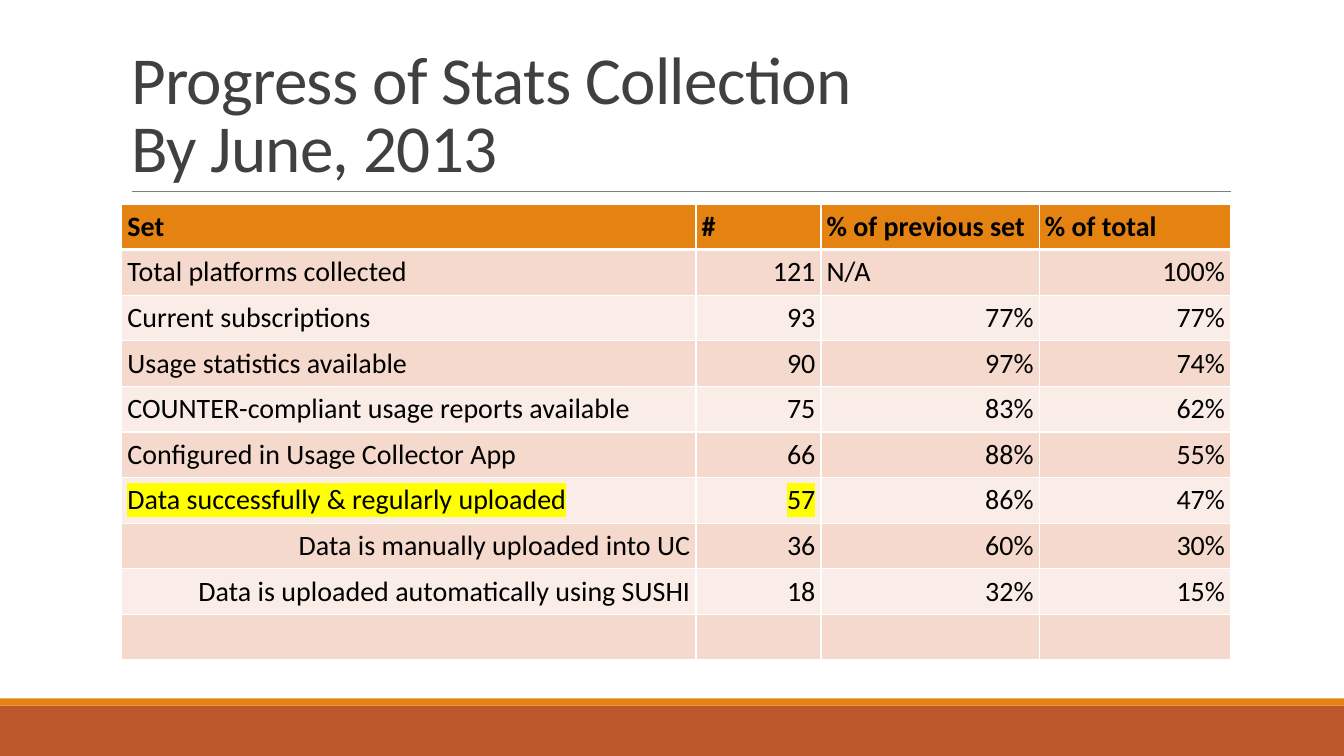
"""Build a slide with a table on the progress of statistics collection."""
from dataclasses import dataclass

from lxml.etree import SubElement
from pptx import Presentation
from pptx.dml.color import RGBColor
from pptx.enum.shapes import MSO_CONNECTOR as Conn, MSO_SHAPE as Shp
from pptx.enum.text import MSO_ANCHOR as Anchor, MSO_AUTO_SIZE as AutoSize, PP_ALIGN as Align
from pptx.oxml import parse_xml
from pptx.oxml.ns import nsdecls, qn
from pptx.util import Cm, Pt

WHITE = RGBColor(0xFF, 0xFF, 0xFF)
BLACK = RGBColor(0, 0, 0)
DARK = RGBColor(0x40, 0x40, 0x40)
GRAY = RGBColor(0x80, 0x80, 0x80)
ORANGE = RGBColor(0xE4, 0x83, 0x12)
RUST = RGBColor(0xBD, 0x58, 0x2C)
PEACH = RGBColor(0xF5, 0xD9, 0xCC)
PALE = RGBColor(0xFA, 0xED, 0xE7)
YELLOW = RGBColor(0xFF, 0xFF, 0x00)
FONT = "Calibri"


@dataclass
class Band:
    top: float
    height: float
    color: RGBColor


@dataclass
class Row:
    texts: tuple[str, ...]
    header: bool = False
    indented: bool = False
    marked: int = 0


BANDS = [Band(17.78, 1.27, RUST), Band(17.6, 0.18, ORANGE)]
COL_WIDTHS = [14.47, 3.15, 5.5, 4.82]
ROW_HEIGHT = 1.15
ROWS = [
    Row(("Set", "#", "% of previous set", "% of total"), header=True),
    Row(("Total platforms collected", "121", "N/A", "100%")),
    Row(("Current subscriptions", "93", "77%", "77%")),
    Row(("Usage statistics available", "90", "97%", "74%")),
    Row(("COUNTER-compliant usage reports available", "75", "83%", "62%")),
    Row(("Configured in Usage Collector App", "66", "88%", "55%")),
    Row(("Data successfully & regularly uploaded", "57", "86%", "47%"), marked=2),
    Row(("Data is manually uploaded into UC", "36", "60%", "30%"), indented=True),
    Row(("Data is uploaded automatically using SUSHI", "18", "32%", "15%"), indented=True),
    Row(("", "", "", "")),
]


def add_run(p, text: str, size: float, color: RGBColor, bold: bool = False):
    r = p.add_run()
    r.text = text
    r.font.size = Pt(size)
    r.font.name = FONT
    r.font.bold = bold
    r.font.color.rgb = color
    return r


def add_band(slide, band: Band, width: int) -> None:
    s = slide.shapes.add_shape(Shp.RECTANGLE, 0, Cm(band.top), width, Cm(band.height))
    s.shadow.inherit = False
    s.fill.solid()
    s.fill.fore_color.rgb = band.color
    s.line.fill.background()


def add_rule(slide) -> None:
    s = slide.shapes.add_connector(Conn.STRAIGHT, Cm(3.32), Cm(4.82), Cm(31.01), Cm(4.82))
    s.line.color.rgb = GRAY
    s.line.width = Pt(0.5)
    SubElement(s._element.spPr, qn("a:effectLst"))


def fill_title(slide, lines: list[str]) -> None:
    s = slide.shapes.title
    s.left, s.top, s.width, s.height = Cm(3.05), Cm(0.79), Cm(27.94), Cm(4.04)
    tf = s.text_frame
    tf.word_wrap = True
    tf.auto_size = AutoSize.NONE
    tf.vertical_anchor = Anchor.BOTTOM
    p = tf.paragraphs[0]
    p.alignment = Align.LEFT
    p.line_spacing = 0.85
    for i, line in enumerate(lines):
        if i:
            p.add_line_break()
        r = add_run(p, line, 48, DARK)
        r.font._element.set("spc", "-50")


def set_borders(cell, top: float, bottom: float) -> None:
    tc_pr = cell._tc.get_or_add_tcPr()
    for i, (side, width) in enumerate({"L": 1, "R": 1, "T": top, "B": bottom}.items()):
        tc_pr.insert(i, parse_xml(
            f'<a:ln{side} {nsdecls("a")} w="{Pt(width)}"><a:solidFill>'
            f'<a:srgbClr val="{WHITE}"/></a:solidFill></a:ln{side}>'))


def highlight(r) -> None:
    fill = r.font._element.find(qn("a:solidFill"))
    fill.addnext(parse_xml(
        f'<a:highlight {nsdecls("a")}><a:srgbClr val="{YELLOW}"/></a:highlight>'))


def fill_cell(cell, row: Row, row_no: int, col_no: int) -> None:
    text = row.texts[col_no]
    cell.fill.solid()
    cell.fill.fore_color.rgb = ORANGE if row.header else PEACH if row_no % 2 else PALE
    set_borders(cell, 3 if row_no == 1 else 1, 3 if row.header else 1)
    cell.margin_left = cell.margin_right = Cm(0.14)
    cell.margin_top = cell.margin_bottom = Cm(0.14)
    if not text:
        return
    p = cell.text_frame.paragraphs[0]
    right = text[0].isdigit() or row.indented
    p.alignment = Align.RIGHT if right else Align.LEFT
    r = add_run(p, text, 20, BLACK, row.header)
    if col_no < row.marked:
        highlight(r)


def add_progress_table(slide) -> None:
    s = slide.shapes.add_table(len(ROWS), len(COL_WIDTHS), Cm(3.07), Cm(5.14),
                               Cm(sum(COL_WIDTHS)), Cm(ROW_HEIGHT * len(ROWS)))
    for column, width in zip(s.table.columns, COL_WIDTHS):
        column.width = Cm(width)
    for i, row in enumerate(ROWS):
        s.table.rows[i].height = Cm(ROW_HEIGHT)
        for j in range(len(COL_WIDTHS)):
            fill_cell(s.table.cell(i, j), row, i, j)


def main() -> None:
    prs = Presentation()
    prs.slide_width, prs.slide_height = Cm(33.87), Cm(19.05)
    slide = prs.slides.add_slide(prs.slide_layouts[5])
    for band in BANDS:
        add_band(slide, band, prs.slide_width)
    add_rule(slide)
    fill_title(slide, ["Progress of Stats Collection", "By June, 2013"])
    add_progress_table(slide)
    prs.save("out.pptx")


if __name__ == "__main__":
    main()
